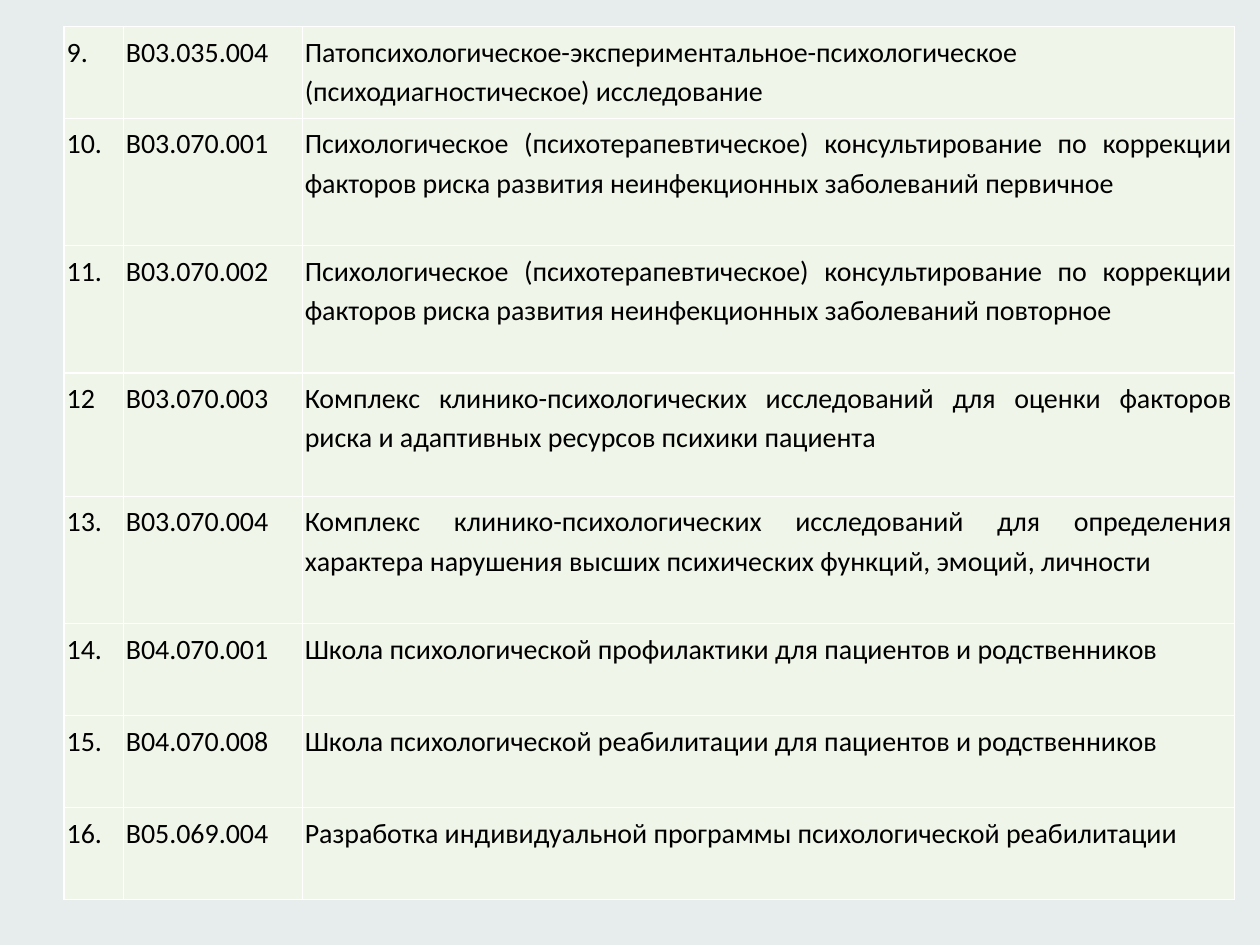
"""Builds a slide listing psychological services by number, code and name."""
import lxml.etree
import pptx
import pptx.dml.color
import pptx.enum.text
import pptx.oxml.ns
import pptx.util

BACKGROUND = pptx.dml.color.RGBColor(0xE7, 0xEC, 0xED)
CELL_FILL = pptx.dml.color.RGBColor(0xEF, 0xF5, 0xE8)
BORDER = pptx.dml.color.RGBColor(0xFF, 0xFF, 0xFF)
TEXT = pptx.dml.color.RGBColor(0x00, 0x00, 0x00)

SLIDE_WIDTH, SLIDE_HEIGHT = 10, 7.5
SERVICES_BOX = (0.51, 0.21, 9.29, 6.93)
COLUMN_UNITS = (0.47, 1.42, 7.4)
SHORT, MEDIUM, TALL = 0.73, 0.98, 1.01
COUNSELLING = (
    "Психологическое (психотерапевтическое) консультирование по коррекции "
    "факторов риска развития неинфекционных заболеваний "
)
ASSESSMENT = "Комплекс клинико-психологических исследований для "
SERVICES = (
    (SHORT, "9.", "B03.035.004",
     "Патопсихологическое-экспериментальное-психологическое "
     "(психодиагностическое) исследование"),
    (TALL, "10.", "B03.070.001", COUNSELLING + "первичное"),
    (TALL, "11.", "B03.070.002", COUNSELLING + "повторное"),
    (MEDIUM, "12", "B03.070.003",
     ASSESSMENT + "оценки факторов риска и адаптивных ресурсов психики пациента"),
    (TALL, "13.", "B03.070.004",
     ASSESSMENT + "определения характера нарушения высших психических функций, "
     "эмоций, личности"),
    (SHORT, "14.", "B04.070.001",
     "Школа психологической профилактики для пациентов и родственников"),
    (SHORT, "15.", "B04.070.008",
     "Школа психологической реабилитации для пациентов и родственников"),
    (SHORT, "16.", "B05.069.004",
     "Разработка индивидуальной программы психологической реабилитации"),
)


def add_borders(cell):
    """Draw a thin line on each side of a cell."""
    properties = cell._tc.get_or_add_tcPr()
    for side in ("a:lnL", "a:lnR", "a:lnT", "a:lnB"):
        line = lxml.etree.SubElement(
            properties, pptx.oxml.ns.qn(side), w=str(pptx.util.Pt(1)))
        fill = lxml.etree.SubElement(line, pptx.oxml.ns.qn("a:solidFill"))
        lxml.etree.SubElement(fill, pptx.oxml.ns.qn("a:srgbClr"), val=str(BORDER))


def write_cell(cell, wording):
    """Format a cell and add its justified text."""
    add_borders(cell)
    cell.fill.solid()
    cell.fill.fore_color.rgb = CELL_FILL
    cell.margin_left = cell.margin_right = pptx.util.Inches(0.02)
    cell.margin_top = cell.margin_bottom = pptx.util.Inches(0.03)
    paragraph = cell.text_frame.paragraphs[0]
    paragraph.alignment = pptx.enum.text.PP_ALIGN.JUSTIFY
    paragraph.line_spacing = 1.15
    run = paragraph.add_run()
    run.text = wording
    run.font.name = "Calibri"
    run.font.size = pptx.util.Pt(16)
    run.font.color.rgb = TEXT


def add_services(slide, box):
    """Place the table of services, dividing its box by column and row units."""
    left, top, width, height = map(pptx.util.Inches, box)
    services = slide.shapes.add_table(
        len(SERVICES), len(COLUMN_UNITS), left, top, width, height).table
    services.first_row = services.horz_banding = False
    for column, units in zip(services.columns, COLUMN_UNITS):
        column.width = int(width * units / sum(COLUMN_UNITS))
    total_height = sum(service[0] for service in SERVICES)
    for row, (units, *wordings) in zip(services.rows, SERVICES):
        row.height = int(height * units / total_height)
        for cell, wording in zip(row.cells, wordings):
            write_cell(cell, wording)


def main():
    """Build and save the presentation."""
    presentation = pptx.Presentation()
    presentation.slide_width = pptx.util.Inches(SLIDE_WIDTH)
    presentation.slide_height = pptx.util.Inches(SLIDE_HEIGHT)
    slide = presentation.slides.add_slide(presentation.slide_layouts[6])
    slide.background.fill.solid()
    slide.background.fill.fore_color.rgb = BACKGROUND
    add_services(slide, SERVICES_BOX)
    presentation.save("out.pptx")


if __name__ == "__main__":
    main()
